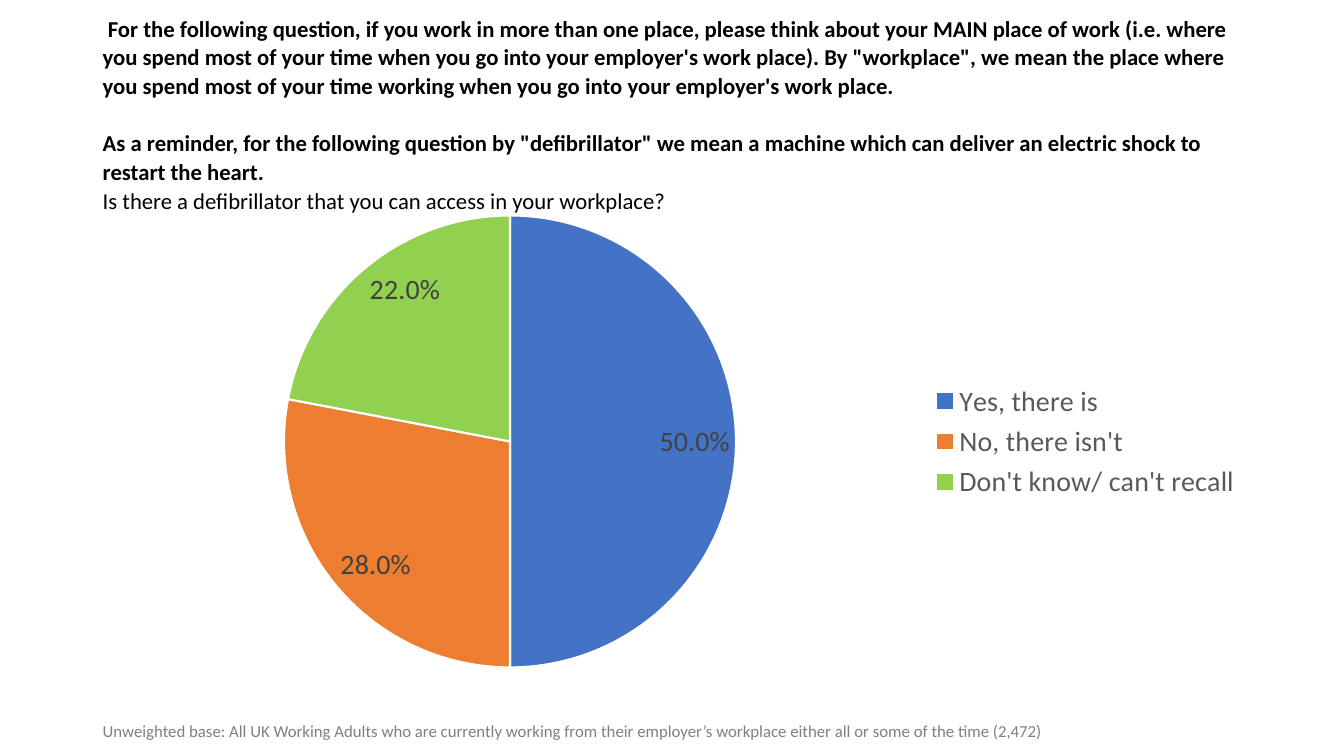
import pptx
import pptx.chart.data
import pptx.dml.color
import pptx.enum.chart
import pptx.enum.text
import pptx.util

Cm = pptx.util.Cm
Pt = pptx.util.Pt
LEFT = 2.34
WIDE = 29.21
INTRO = (
    " For the following question, if you work in more than one place, please think "
    "about your MAIN place of work (i.e. where you spend most of your time when you "
    "go into your employer's work place). By \"workplace\", we mean the place where "
    "you spend most of your time working when you go into your employer's work place."
)
REMIND = (
    "As a reminder, for the following question by \"defibrillator\" we mean a machine "
    "which can deliver an electric shock to restart the heart."
)
ASK = "Is there a defibrillator that you can access in your workplace?"
BASE = (
    "Unweighted base: All UK Working Adults who are currently working from their "
    "employer’s workplace either all or some of the time (2,472)"
)
SLICES = [
    ("Yes, there is", 0.5, "4472C4"),
    ("No, there isn't", 0.28, "ED7D31"),
    ("Don't know/ can't recall", 0.22, "92D050"),
]


def color(code):
    return pptx.dml.color.RGBColor.from_string(code)


def style(font, size, code, bold=False):
    font.name = "Calibri"
    font.size = Pt(size)
    font.bold = bold
    font.color.rgb = color(code)


def add_text(slide, box, paras, size, code, anchor, pitch=1.0):
    frame = slide.shapes.add_textbox(*map(Cm, box)).text_frame
    frame.word_wrap = True
    frame.vertical_anchor = anchor
    for i, (text, bold, gap) in enumerate(paras):
        para = frame.add_paragraph() if i else frame.paragraphs[0]
        para.line_spacing = pitch
        para.space_before = Pt(gap)
        run = para.add_run()
        run.text = text
        style(run.font, size, code, bold)


def add_pie(slide, box, slices):
    enum = pptx.enum.chart
    data = pptx.chart.data.CategoryChartData(number_format="0.0%")
    data.categories = [name for name, _, _ in slices]
    data.add_series("Series 1", [value for _, value, _ in slices])
    frame = slide.shapes.add_chart(enum.XL_CHART_TYPE.PIE, *map(Cm, box), data)
    chart = frame.chart
    style(chart.font, 20, "000000")
    chart.has_title = False
    chart.has_legend = True
    legend = chart.legend
    legend.position = enum.XL_LEGEND_POSITION.RIGHT
    legend.include_in_layout = False
    style(legend.font, 20, "595959")
    plot = chart.plots[0]
    plot.vary_by_categories = True
    for i, (_, _, code) in enumerate(slices):
        form = plot.series[0].points[i].format
        form.fill.solid()
        form.fill.fore_color.rgb = color(code)
        form.line.color.rgb = color("FFFFFF")
        form.line.width = Pt(1.5)
    labels = plot.series[0].data_labels
    labels.show_value = True
    labels.show_percentage = False
    labels.number_format = "0.0%"
    labels.number_format_is_linked = False
    labels.position = enum.XL_LABEL_POSITION.INSIDE_END
    style(labels.font, 20, "404040")


def main():
    deck = pptx.Presentation()
    deck.slide_width = Cm(33.87)
    deck.slide_height = Cm(19.05)
    slide = deck.slides.add_slide(deck.slide_layouts[6])
    anchor = pptx.enum.text.MSO_ANCHOR
    paras = [(INTRO, True, 0), (REMIND, True, 20.7), (ASK, False, 0)]
    add_text(slide, (LEFT, 1.02, WIDE, 3.68), paras, 16.2, "000000",
             anchor.MIDDLE, 1.05)
    add_text(slide, (LEFT, 18.03, 30.56, 0.76), [(BASE, False, 0)], 12,
             "808080", anchor.TOP)
    add_pie(slide, (LEFT, 5.08, WIDE, 12.09), SLICES)
    deck.save("out.pptx")


if __name__ == "__main__":
    main()
